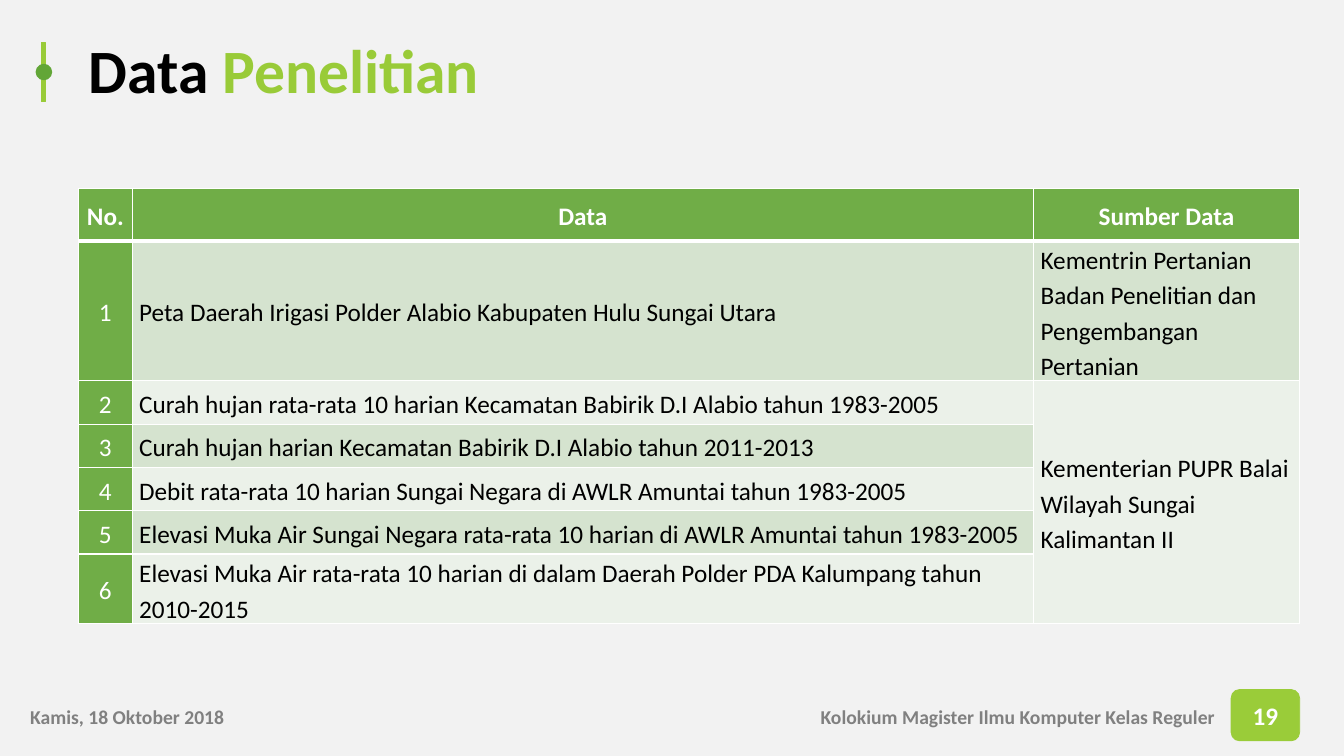
import pptx
import pptx.util
import pptx.dml.color
import pptx.enum.shapes
import pptx.enum.text
import pptx.oxml
import pptx.oxml.ns
import lxml.etree

RGB = pptx.dml.color.RGBColor
SHAPE = pptx.enum.shapes.MSO_SHAPE
ALIGN = pptx.enum.text.PP_ALIGN
MIDDLE = pptx.enum.text.MSO_ANCHOR.MIDDLE
Pt = pptx.util.Pt

BACKGROUND = RGB(0xF2, 0xF2, 0xF2)
BLACK = RGB(0, 0, 0)
WHITE = RGB(0xFF, 0xFF, 0xFF)
GRAY = RGB(0x80, 0x80, 0x80)
LIME = RGB(0x99, 0xCB, 0x38)
BADGE_LIME = RGB(0x9A, 0xCC, 0x39)
DOT_GREEN = RGB(0x62, 0xA6, 0x37)
HEADER_GREEN = RGB(0x70, 0xAD, 0x47)
BANDS = [RGB(0xD5, 0xE3, 0xCF), RGB(0xEB, 0xF1, 0xE9)]

WIDTH = pptx.util.Inches(13.33)
HEIGHT = pptx.util.Inches(7.5)

COLUMNS = [3.98, 67.07, 19.8]
ROWS = [6.93, 18.53, 5.73, 5.73, 5.73, 5.73, 9.2]
HEADER = ["No.", "Data", "Sumber Data"]
DATASETS = [
    "Peta Daerah Irigasi Polder Alabio Kabupaten Hulu Sungai Utara",
    "Curah hujan rata-rata 10 harian Kecamatan Babirik D.I Alabio tahun 1983-2005",
    "Curah hujan harian Kecamatan Babirik D.I Alabio tahun 2011-2013",
    "Debit rata-rata 10 harian Sungai Negara di AWLR Amuntai tahun 1983-2005",
    "Elevasi Muka Air Sungai Negara rata-rata 10 harian di AWLR Amuntai tahun 1983-2005",
    "Elevasi Muka Air rata-rata 10 harian di dalam Daerah Polder PDA Kalumpang tahun 2010-2015",
]
SOURCES = [
    "Kementrin Pertanian Badan Penelitian dan Pengembangan Pertanian",
    "Kementerian PUPR Balai Wilayah Sungai Kalimantan II",
]


def across(percent):
    return int(WIDTH * percent / 100)


def down(percent):
    return int(HEIGHT * percent / 100)


def place(left, top, width, height):
    return across(left), down(top), across(width), down(height)


def apply(target, values):
    for name, value in values.items():
        setattr(target, name, value)


def add_run(p, text, size, color, bold=True):
    r = p.add_run()
    r.text = text
    apply(r.font, {"name": "Calibri", "size": Pt(size), "bold": bold})
    r.font.color.rgb = color


def add_text(s, box, runs, size, frame, paragraph):
    tf = s.shapes.add_textbox(*place(*box)).text_frame
    apply(tf, {"word_wrap": True, **frame})
    p = tf.paragraphs[0]
    apply(p, paragraph)
    for text, color in runs:
        add_run(p, text, size, color)
    return p


def add_block(shapes, kind, box, color, line_width):
    sp = shapes.add_shape(kind, *place(*box))
    sp.shadow.inherit = False
    sp.fill.solid()
    sp.fill.fore_color.rgb = color
    sp.line.color.rgb = color
    sp.line.width = Pt(line_width)
    return sp


def add_badge(s, box, number):
    tf = add_block(s.shapes, SHAPE.ROUNDED_RECTANGLE, box, BADGE_LIME, 0.5).text_frame
    tf.vertical_anchor = MIDDLE
    p = tf.paragraphs[0]
    p.alignment = ALIGN.CENTER
    add_run(p, number, 18, WHITE)


def add_right_tab(p, position):
    tabs = lxml.etree.SubElement(p._p.get_or_add_pPr(), pptx.oxml.ns.qn("a:tabLst"))
    tab = lxml.etree.SubElement(tabs, pptx.oxml.ns.qn("a:tab"))
    tab.set("pos", str(across(position)))
    tab.set("algn", "r")


def set_borders(cell, widths):
    tc_pr = cell._tc.get_or_add_tcPr()
    for side, width in widths.items():
        tc_pr.append(pptx.oxml.parse_xml(
            f'<a:ln{side} {pptx.oxml.ns.nsdecls("a")} w="{Pt(width)}">'
            f'<a:solidFill><a:srgbClr val="{WHITE}"/></a:solidFill></a:ln{side}>'))


def format_cell(cell, text, row, column):
    header = row == 0
    green = header or column == 0
    set_borders(cell, {"L": 1, "R": 1, "T": 3 if row == 1 else 1, "B": 3 if header else 1})
    cell.fill.solid()
    cell.fill.fore_color.rgb = HEADER_GREEN if green else BANDS[(row - 1) % 2]
    apply(cell, {
        "vertical_anchor": MIDDLE,
        "margin_left": across(0.53), "margin_right": across(0.53),
        "margin_top": 0, "margin_bottom": 0,
    })
    p = cell.text_frame.paragraphs[0]
    apply(p, {"alignment": ALIGN.CENTER if green else ALIGN.LEFT, "line_spacing": 1.15})
    if text:
        add_run(p, text, 18, WHITE if green else BLACK, header)


def add_data_table(s, left, top):
    box = place(left, top, sum(COLUMNS), sum(ROWS))
    table = s.shapes.add_table(len(ROWS), len(COLUMNS), *box).table
    for column, share in zip(table.columns, COLUMNS):
        column.width = across(share)
    for row, share in zip(table.rows, ROWS):
        row.height = down(share)
    sources = SOURCES + [""] * (len(DATASETS) - len(SOURCES))
    body = [[str(i), data, source] for i, (data, source) in enumerate(zip(DATASETS, sources), 1)]
    for i, texts in enumerate([HEADER] + body):
        for j, text in enumerate(texts):
            format_cell(table.cell(i, j), text, i, j)
    table.cell(2, 2).merge(table.cell(len(ROWS) - 1, 2))


def main():
    prs = pptx.Presentation()
    apply(prs, {"slide_width": WIDTH, "slide_height": HEIGHT})
    s = prs.slides.add_slide(prs.slide_layouts[6])
    s.background.fill.solid()
    s.background.fill.fore_color.rgb = BACKGROUND

    add_text(s, (5.85, 3.2, 90.77, 13.07), [("Data ", BLACK), ("Penelitian", LIME)], 44,
             {"vertical_anchor": MIDDLE}, {"line_spacing": 0.9})
    add_badge(s, (91.6, 91.2, 5.1, 6.8), "19")
    footer = add_text(s, (1.5, 92.53, 95.2, 4.53),
                      [("Kamis, 18 Oktober 2018\tKolokium Magister Ilmu Komputer Kelas Reguler", GRAY)],
                      14, {}, {"alignment": ALIGN.LEFT})
    add_right_tab(footer, 88.18)

    marker = s.shapes.add_group_shape()
    add_block(marker.shapes, SHAPE.RECTANGLE, (3.08, 5.6, 0.3, 7.87), LIME, 1)
    add_block(marker.shapes, SHAPE.OVAL, (2.7, 8.53, 1.13, 2), DOT_GREEN, 1)

    add_data_table(s, 5.85, 24.93)
    prs.save("out.pptx")


if __name__ == "__main__":
    main()
